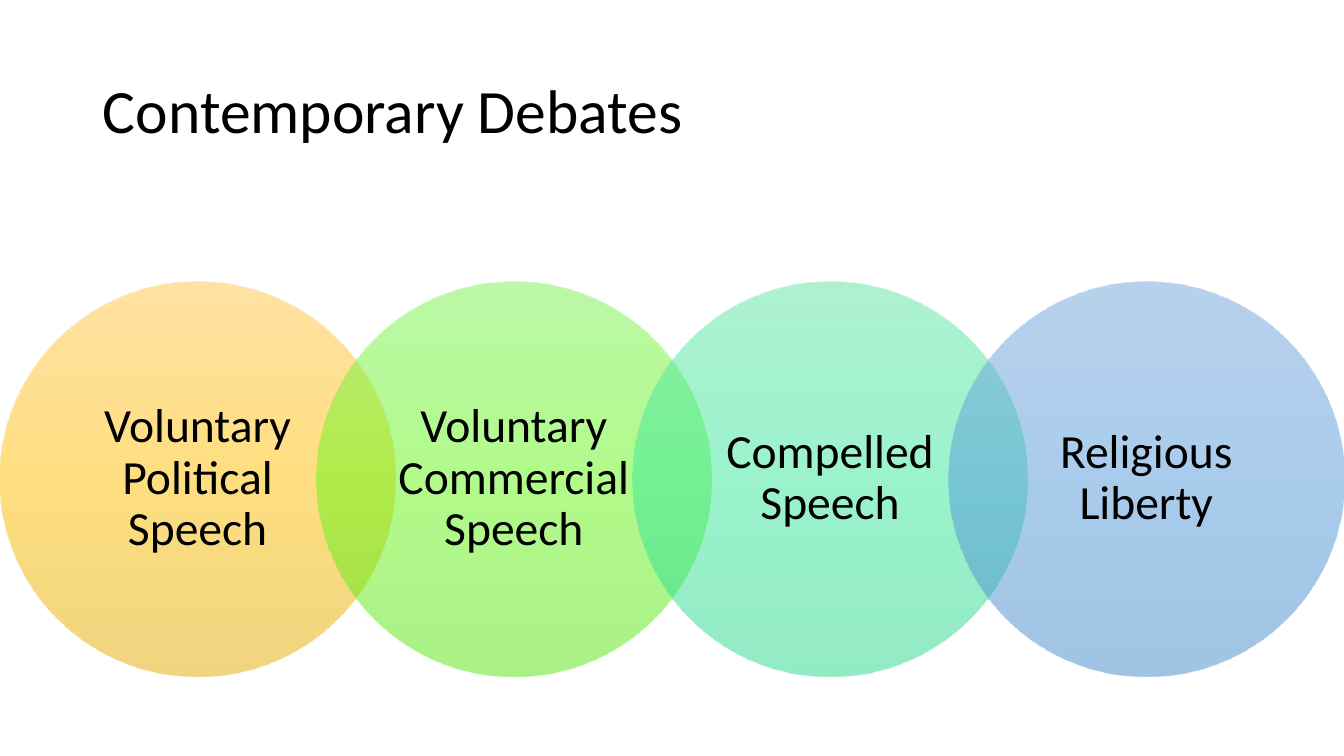
import pptx
import pptx.dml.color
import pptx.enum.shapes
import pptx.enum.text
import pptx.oxml
import pptx.oxml.ns
import pptx.util

SLIDE_WIDTH = pptx.util.Inches(13.33)
SLIDE_HEIGHT = pptx.util.Inches(7.5)
FONT = "Calibri"
TEXT_COLOR = "000000"
OPACITY_PERCENT = 50

# Each circle starts 80 % of a diameter after the one before; the row fills the slide
STEP = 0.8
CIRCLE_TOP = 0.372

# Label and gradient colours from top to bottom
DEBATES = [
    ("Voluntary Political Speech", ("FFC64B", "FFC000", "E3AB00")),
    ("Voluntary Commercial Speech", ("7AF350", "63F916", "56E50C")),
    ("Compelled Speech", ("5EE6A6", "37E99C", "27D88C")),
    ("Religious Liberty", ("71A6DB", "559BDB", "448ACA")),
]


def rgb(color):
    return pptx.dml.color.RGBColor.from_string(color)


def write_text(text_frame, text, size, alignment):
    text_frame.word_wrap = True
    text_frame.auto_size = pptx.enum.text.MSO_AUTO_SIZE.NONE
    text_frame.vertical_anchor = pptx.enum.text.MSO_ANCHOR.MIDDLE
    text_frame.text = text
    paragraph = text_frame.paragraphs[0]
    paragraph.alignment = alignment
    paragraph.line_spacing = 0.9
    paragraph.font.name = FONT
    paragraph.font.size = pptx.util.Pt(size)
    paragraph.font.color.rgb = rgb(TEXT_COLOR)


def fill_gradient(shape, colors):
    """Fill downwards with evenly spaced, translucent colour stops."""
    last = len(colors) - 1
    stops = "".join(
        f'<a:gs pos="{100000 * index // last}"><a:srgbClr val="{rgb(color)}">'
        f'<a:alpha val="{OPACITY_PERCENT * 1000}"/></a:srgbClr></a:gs>'
        for index, color in enumerate(colors)
    )
    gradient = pptx.oxml.parse_xml(
        f'<a:gradFill {pptx.oxml.ns.nsdecls("a")} rotWithShape="1">'
        f'<a:gsLst>{stops}</a:gsLst><a:lin ang="5400000" scaled="0"/></a:gradFill>'
    )
    shape.fill.background()
    placeholder_fill = shape.element.spPr.find(pptx.oxml.ns.qn("a:noFill"))
    shape.element.spPr.replace(placeholder_fill, gradient)


def add_title(slide, text):
    title = slide.shapes.title
    title.left, title.top = pptx.util.Inches(0.92), pptx.util.Inches(0.4)
    title.width, title.height = pptx.util.Inches(11.5), pptx.util.Inches(1.45)
    write_text(title.text_frame, text, 44, pptx.enum.text.PP_ALIGN.LEFT)


def add_circle(slide, left, top, diameter, label, colors):
    circle = slide.shapes.add_shape(
        pptx.enum.shapes.MSO_SHAPE.OVAL, left, top, diameter, diameter
    )
    circle.shadow.inherit = False
    circle.line.fill.background()
    fill_gradient(circle, colors)
    text_frame = circle.text_frame
    text_frame.margin_left = text_frame.margin_right = pptx.util.Inches(0.22)
    text_frame.margin_top = text_frame.margin_bottom = pptx.util.Inches(0.05)
    write_text(text_frame, label, 34, pptx.enum.text.PP_ALIGN.CENTER)


def main():
    presentation = pptx.Presentation()
    presentation.slide_width = SLIDE_WIDTH
    presentation.slide_height = SLIDE_HEIGHT
    slide = presentation.slides.add_slide(presentation.slide_layouts[5])

    # Title
    add_title(slide, "Contemporary Debates")

    # Row of overlapping circles
    diameter = int(SLIDE_WIDTH / (1 + STEP * (len(DEBATES) - 1)))
    top = int(SLIDE_HEIGHT * CIRCLE_TOP)
    for index, (label, colors) in enumerate(DEBATES):
        left = int(index * STEP * diameter)
        add_circle(slide, left, top, diameter, label, colors)

    presentation.save("out.pptx")


if __name__ == "__main__":
    main()
